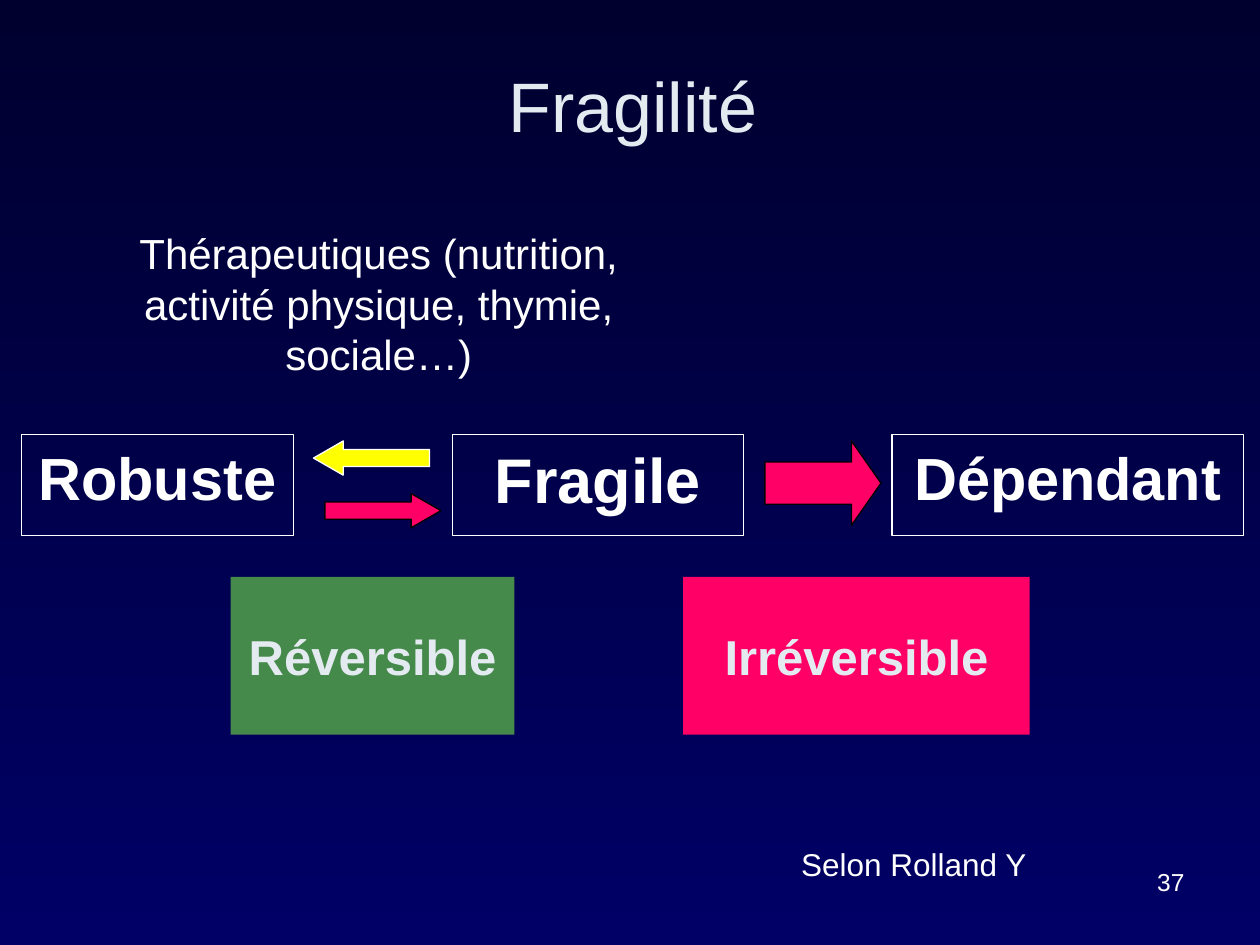
from dataclasses import dataclass
from typing import NamedTuple

from pptx import Presentation
from pptx.dml.color import RGBColor
from pptx.enum.shapes import MSO_SHAPE
from pptx.enum.text import MSO_ANCHOR, MSO_AUTO_SIZE, PP_ALIGN
from pptx.util import Cm, Pt

RECTANGLE = MSO_SHAPE.RECTANGLE
LEFT_ARROW, RIGHT_ARROW = MSO_SHAPE.LEFT_ARROW, MSO_SHAPE.RIGHT_ARROW
TOP, MIDDLE = MSO_ANCHOR.TOP, MSO_ANCHOR.MIDDLE
LEFT, CENTER, RIGHT = PP_ALIGN.LEFT, PP_ALIGN.CENTER, PP_ALIGN.RIGHT
NO_AUTOFIT = MSO_AUTO_SIZE.NONE
TITLE_ONLY = 5


@dataclass(frozen=True)
class Theme:
    font: str = "Arial"
    night: str = "00002F"
    navy: str = "000066"
    white: str = "FFFFFF"
    black: str = "000000"
    pale: str = "E3EBF1"
    green: str = "468A4B"
    pink: str = "FF0066"
    yellow: str = "FFFF00"
    title: int = 40
    fragile: int = 36
    state: int = 34
    outcome: int = 28
    therapy: int = 24
    credit: int = 18
    number: int = 14
    outline: float = 0.75


class Box(NamedTuple):
    left: float
    top: float
    width: float
    height: float

    def inner(self, left, top, width, height):
        return Box(self.left + left, self.top + top, width, height)

    def lengths(self):
        return [Cm(value) for value in self]


THEME = Theme()


def rgb(color):
    return RGBColor.from_string(color)


def write(holder, words, size, color=THEME.white, bold=False, align=CENTER, anchor=MIDDLE):
    frame = holder.text_frame
    frame.text = words
    frame_format = {"word_wrap": True, "auto_size": NO_AUTOFIT, "vertical_anchor": anchor}
    for name, value in frame_format.items():
        setattr(frame, name, value)
    paragraph = frame.paragraphs[0]
    paragraph.alignment = align
    font = paragraph.runs[0].font
    for name, value in {"name": THEME.font, "size": Pt(size), "bold": bold}.items():
        setattr(font, name, value)
    font.color.rgb = rgb(color)


def add_text(slide, box, words, size, **text_format):
    write(slide.shapes.add_textbox(*box.lengths()), words, size, **text_format)


def add_figure(slide, kind, box, fill=None, line=None):
    figure = slide.shapes.add_shape(kind, *box.lengths())
    figure.shadow.inherit = False
    if fill:
        figure.fill.solid()
        figure.fill.fore_color.rgb = rgb(fill)
    else:
        figure.fill.background()
    if line:
        figure.line.color.rgb = rgb(line)
        figure.line.width = Pt(THEME.outline)
    else:
        figure.line.fill.background()
    return figure


def paint_background(slide):
    fill = slide.background.fill
    fill.gradient()
    fill.gradient_angle = 270
    for stop, color, position in zip(fill.gradient_stops, (THEME.night, THEME.navy), (0, 1)):
        stop.color.rgb = rgb(color)
        stop.position = position


def place_heading(slide, box):
    heading = slide.shapes.title
    for name, value in zip(("left", "top", "width", "height"), box.lengths()):
        setattr(heading, name, value)
    write(heading, "Fragilité", THEME.title, THEME.pale)


def place_states(slide, box):
    states = [
        ("Robuste", 0, 5.49, THEME.state),
        ("Fragile", 8.69, 5.87, THEME.fragile),
        ("Dépendant", 17.55, 7.09, THEME.state),
    ]
    for words, left, width, size in states:
        state = add_figure(slide, RECTANGLE, box.inner(left, 0, width, box.height), line=THEME.white)
        write(state, words, size, bold=True, anchor=TOP)

    transitions = [
        (RIGHT_ARROW, 6.12, 1.19, 0.69, 0.87, THEME.pink, THEME.black),
        (LEFT_ARROW, 5.89, 0.13, 0.69, 0.87, THEME.yellow, THEME.white),
        (RIGHT_ARROW, 14.99, 0.13, 1.7, 0.35, THEME.pink, THEME.black),
    ]
    for kind, left, top, height, head, fill, line in transitions:
        arrow = add_figure(slide, kind, box.inner(left, top, 2.34, height), fill, line)
        arrow.adjustments[1] = head


def place_outcomes(slide, box):
    outcomes = [
        ("Réversible", 0, 5.72, THEME.green),
        ("Irréversible", 9.12, 6.99, THEME.pink),
    ]
    for words, left, width, fill in outcomes:
        outcome = add_figure(slide, RECTANGLE, box.inner(left, 0, width, box.height), fill)
        write(outcome, words, THEME.outcome, THEME.pale, bold=True)


def place_footer(slide, box):
    add_text(slide, box.inner(0, 0, 8.61, 1.02), "Selon Rolland Y", THEME.credit,
             align=LEFT, anchor=TOP)
    add_text(slide, box.inner(2.31, 0.43, 5.92, 1.32), "37", THEME.number,
             align=RIGHT, anchor=TOP)


def main():
    deck = Presentation()
    deck.slide_width, deck.slide_height = Cm(25.4), Cm(19.05)
    slide = deck.slides.add_slide(deck.slide_layouts[TITLE_ONLY])
    paint_background(slide)
    place_heading(slide, Box(1.4, 0.71, 22.71, 2.79))
    add_text(slide, Box(1.5, 4.72, 12.27, 2.79),
             "Thérapeutiques (nutrition, activité physique, thymie, sociale…)", THEME.therapy)
    place_states(slide, Box(0.43, 8.76, 24.64, 2.03))
    place_outcomes(slide, Box(4.65, 11.63, 16.11, 3.18))
    place_footer(slide, Box(15.9, 16.92, 8.61, 1.75))
    deck.save("out.pptx")


if __name__ == "__main__":
    main()
